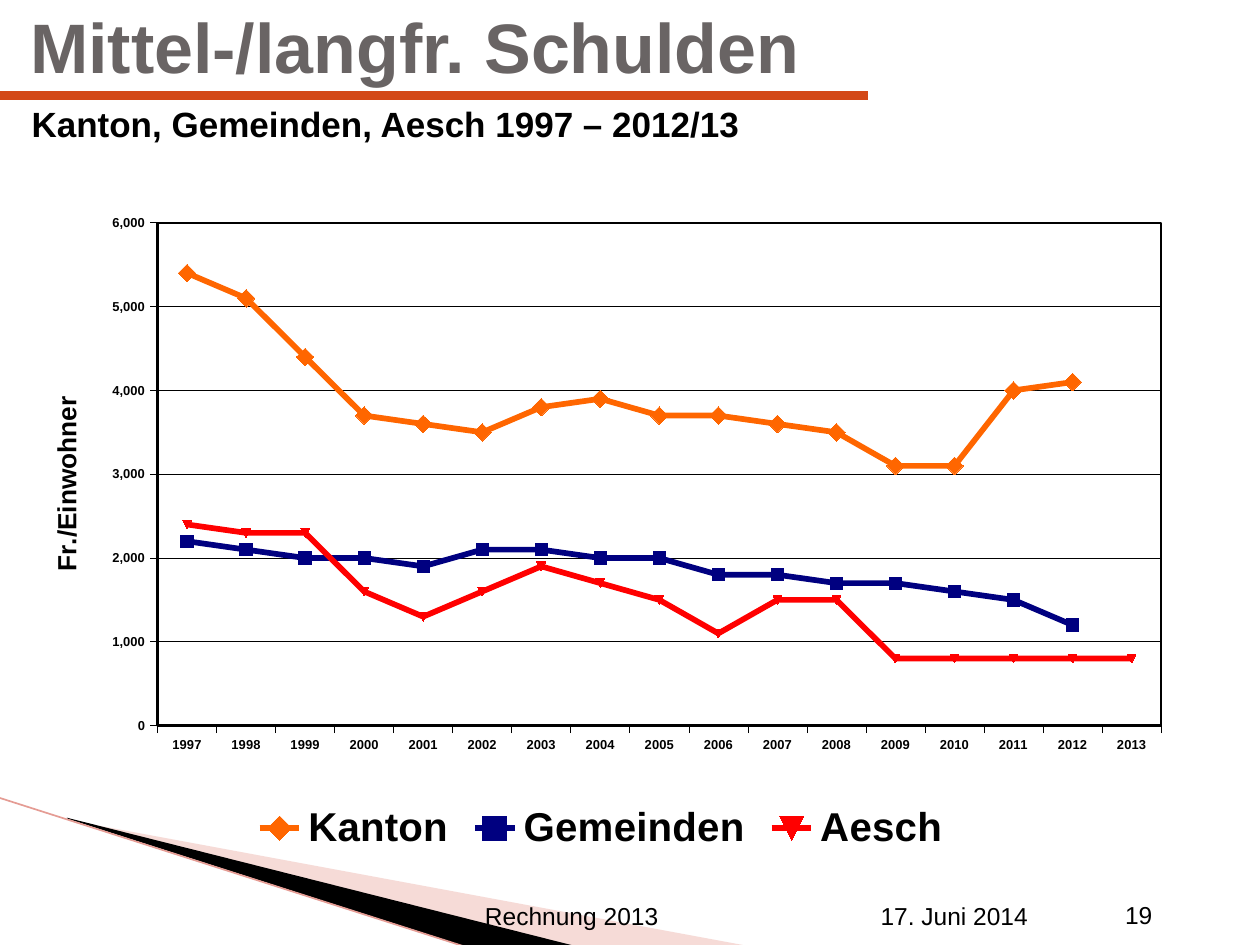
from pptx import Presentation
from pptx.chart.data import CategoryChartData
from pptx.dml.color import RGBColor
from pptx.enum.chart import XL_CHART_TYPE as ChartType, XL_LEGEND_POSITION as LegendPosition
from pptx.enum.chart import XL_MARKER_STYLE as MarkerStyle, XL_TICK_MARK as TickMark
from pptx.enum.shapes import MSO_CONNECTOR as Connector
from pptx.enum.text import MSO_ANCHOR as Anchor, MSO_AUTO_SIZE as AutoSize, PP_ALIGN as Align
from pptx.oxml import parse_xml
from pptx.oxml.ns import nsdecls, qn
from pptx.util import Pt

THEME = {
    "font": "Arial",
    "text": RGBColor.from_string("000000"),
    "title": RGBColor.from_string("696464"),
    "rule": RGBColor.from_string("D34817"),
    "wedge": RGBColor.from_string("E9A59D"),
    "edge": RGBColor.from_string("E59C94"),
    "kanton": RGBColor.from_string("FF6600"),
    "gemeinden": RGBColor.from_string("000080"),
    "aesch": RGBColor.from_string("FF0000"),
    "title_size": 40,
    "subtitle_size": 20,
    "footer_size": 14,
    "axis_size": 7.4,
    "axis_title_size": 15,
    "legend_size": 23,
}


def style_font(font, size, bold=True, color=THEME["text"]):
    values = {"name": THEME["font"], "size": Pt(size), "bold": bold}
    for name, value in values.items():
        setattr(font, name, value)
    font.color.rgb = color


def manual_layout(left, top, width, height, inner=False):
    target = '<c:layoutTarget val="inner"/>' if inner else ""
    return parse_xml(
        f'<c:layout {nsdecls("c")}><c:manualLayout>{target}'
        '<c:xMode val="edge"/><c:yMode val="edge"/>'
        f'<c:x val="{left}"/><c:y val="{top}"/><c:w val="{width}"/><c:h val="{height}"/>'
        "</c:manualLayout></c:layout>"
    )


presentation = Presentation()
presentation.slide_width, presentation.slide_height = Pt(720), Pt(540)
slide = presentation.slides.add_slide(presentation.slide_layouts[1])
shapes = slide.shapes

wedges = [
    ([(39.6, 468.7), (428.4, 540.7), (328.3, 540.7), (39.6, 468)], THEME["wedge"], 40),
    ([(38.2, 467.3), (329, 540.7), (267.8, 541.4), (38.9, 468)], THEME["text"], 100),
]
for points, color, opacity in wedges:
    corners = [(Pt(x), Pt(y)) for x, y in points]
    builder = shapes.build_freeform(*corners[0], scale=1.0)
    builder.add_line_segments(corners[1:], close=True)
    wedge = builder.convert_to_shape()
    wedge.shadow.inherit = False
    wedge.fill.solid()
    wedge.fill.fore_color.rgb = color
    wedge.line.fill.background()
    if opacity < 100:
        fill_color = wedge.fill._xPr.find(qn("a:solidFill"))[0]
        fill_color.append(parse_xml(f'<a:alpha {nsdecls("a")} val="{opacity * 1000}"/>'))

lines = [
    ((-0.7, 455.8, 267.1, 541.4), THEME["edge"], 0.95),
    ((0, 54.7, 496.1, 54.7), THEME["rule"], 5),
]
for ends, color, width in lines:
    line = shapes.add_connector(Connector.STRAIGHT, *map(Pt, ends))
    line.line.color.rgb = color
    line.line.width = Pt(width)
    line._element.spPr.append(parse_xml(f'<a:effectLst {nsdecls("a")}/>'))

headings = [
    (shapes.title, "Mittel-/langfr. Schulden", (10.1, -4.3, 571, 60.5),
     Anchor.MIDDLE, THEME["title_size"], THEME["title"]),
    (slide.placeholders[1], "Kanton, Gemeinden, Aesch 1997 – 2012/13", (10.8, 54.7, 689, 45.4),
     Anchor.TOP, THEME["subtitle_size"], THEME["text"]),
]
for shape, text, box, anchor, size, color in headings:
    shape.left, shape.top, shape.width, shape.height = map(Pt, box)
    frame = shape.text_frame
    frame.text = text
    frame_format = {"vertical_anchor": anchor, "word_wrap": True, "auto_size": AutoSize.NONE}
    for name, value in frame_format.items():
        setattr(frame, name, value)
    paragraph = frame.paragraphs[0]
    paragraph.alignment = Align.LEFT
    paragraph.space_before = Pt(0)
    properties = paragraph._p.get_or_add_pPr()
    properties.set("marL", "0")
    properties.set("indent", "0")
    properties.append(parse_xml(f'<a:buNone {nsdecls("a")}/>'))
    style_font(paragraph.runs[0].font, size, color=color)

footers = [
    ("Rechnung 2013", (270, 511.2, 226, 28.8)),
    ("17. Juni 2014", (496.1, 511.2, 139.7, 28.8)),
    ("19", (635.8, 510.5, 50.4, 28.8)),
]
for text, box in footers:
    frame = shapes.add_textbox(*map(Pt, box)).text_frame
    frame.word_wrap = True
    frame.text = text
    style_font(frame.paragraphs[0].runs[0].font, THEME["footer_size"], bold=False)

series_data = [
    ("Kanton", [5400, 5100, 4400, 3700, 3600, 3500, 3800, 3900, 3700, 3700, 3600, 3500,
                3100, 3100, 4000, 4100, None], THEME["kanton"], MarkerStyle.DIAMOND, 10),
    ("Gemeinden", [2200, 2100, 2000, 2000, 1900, 2100, 2100, 2000, 2000, 1800, 1800, 1700,
                   1700, 1600, 1500, 1200, None], THEME["gemeinden"], MarkerStyle.SQUARE, 7),
    ("Aesch", [2400, 2300, 2300, 1600, 1300, 1600, 1900, 1700, 1500, 1100, 1500, 1500,
               800, 800, 800, 800, 800], THEME["aesch"], MarkerStyle.AUTOMATIC, 5),
]
chart_data = CategoryChartData(number_format="#,##0")
chart_data.categories = [str(year) for year in range(1997, 2014)]
for name, values, *_ in series_data:
    chart_data.add_series(name, values)
chart = shapes.add_chart(
    ChartType.LINE_MARKERS, *map(Pt, (20.2, 105.8, 646.6, 385.2)), chart_data
).chart
chart.has_title = False
style_font(chart.font, THEME["axis_size"])

for series, (_, _, color, marker_style, marker_size) in zip(chart.plots[0].series, series_data):
    series.smooth = False
    series.format.line.color.rgb = color
    series.format.line.width = Pt(3.25)
    series.marker.style = marker_style
    series.marker.size = marker_size
    series.marker.format.fill.solid()
    series.marker.format.fill.fore_color.rgb = color
    series.marker.format.line.color.rgb = color

value_axis, category_axis = chart.value_axis, chart.category_axis
value_format = {"minimum_scale": 0, "maximum_scale": 6000, "major_unit": 1000,
                "has_major_gridlines": True}
for name, value in value_format.items():
    setattr(value_axis, name, value)
value_axis.tick_labels.number_format = "#,##0"
value_axis.tick_labels.number_format_is_linked = False
for axis in (value_axis, category_axis):
    axis.major_tick_mark = TickMark.OUTSIDE
    style_font(axis.tick_labels.font, THEME["axis_size"])
for part in (value_axis, category_axis, value_axis.major_gridlines):
    part.format.line.color.rgb = THEME["text"]
    part.format.line.width = Pt(0.37)
axis_title = value_axis.axis_title.text_frame
axis_title.text = "Fr./Einwohner"
style_font(axis_title.paragraphs[0].runs[0].font, THEME["axis_title_size"])

chart.has_legend = True
legend = chart.legend
legend.position = LegendPosition.BOTTOM
legend.include_in_layout = False
style_font(legend.font, THEME["legend_size"])
legend._element.find(qn("c:legendPos")).addnext(manual_layout(0.19, 0.87, 0.75, 0.09))

plot_area = chart._chartSpace.chart.plotArea
for layout in plot_area.findall(qn("c:layout")):
    plot_area.remove(layout)
plot_area.insert(0, manual_layout(0.108, 0.056, 0.887, 0.746, inner=True))
plot_area.append(parse_xml(
    f'<c:spPr {nsdecls("c", "a")}><a:noFill/><a:ln w="{Pt(1.5)}"><a:solidFill>'
    f'<a:srgbClr val="{THEME["text"]}"/></a:solidFill></a:ln></c:spPr>'
))

presentation.save("out.pptx")
